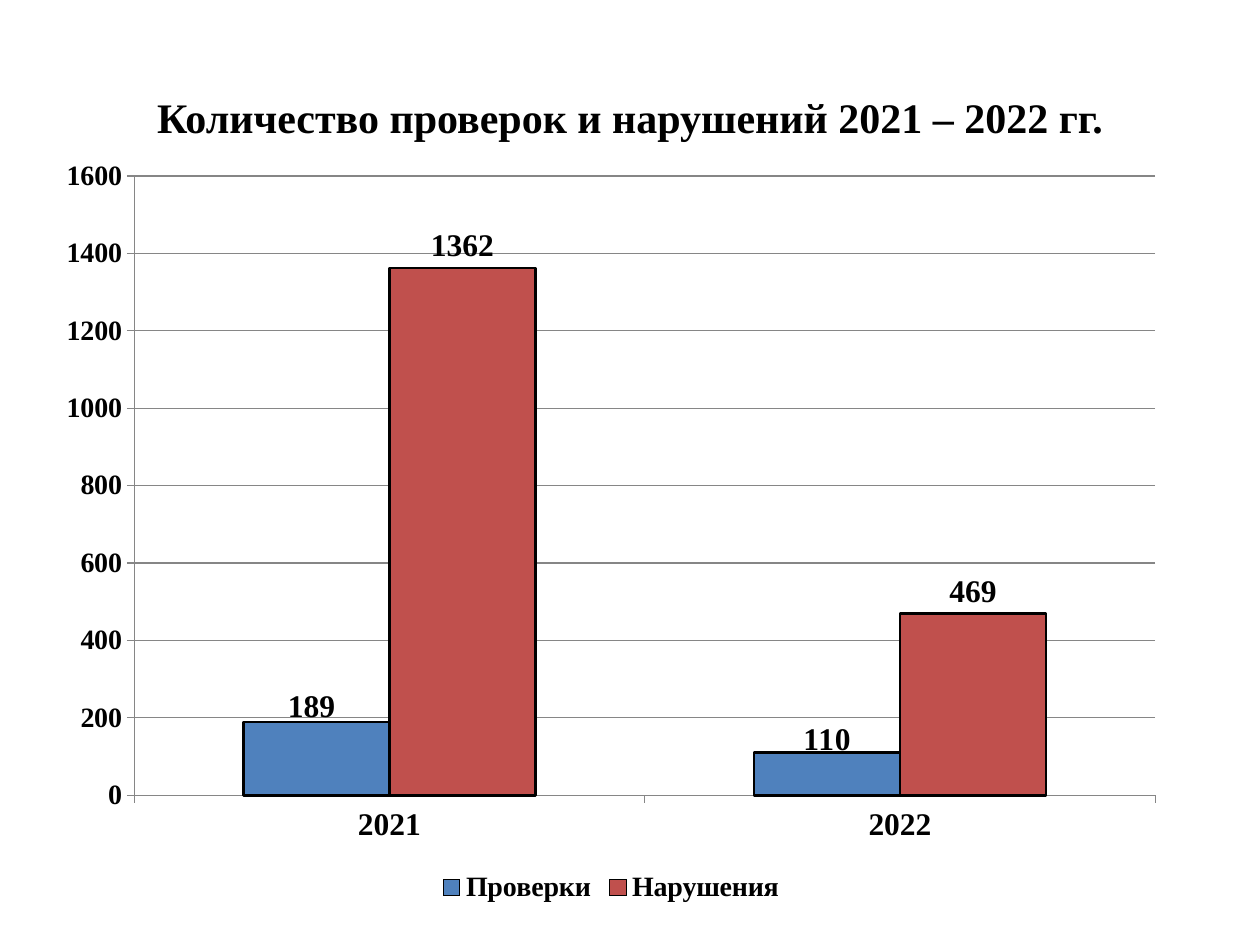
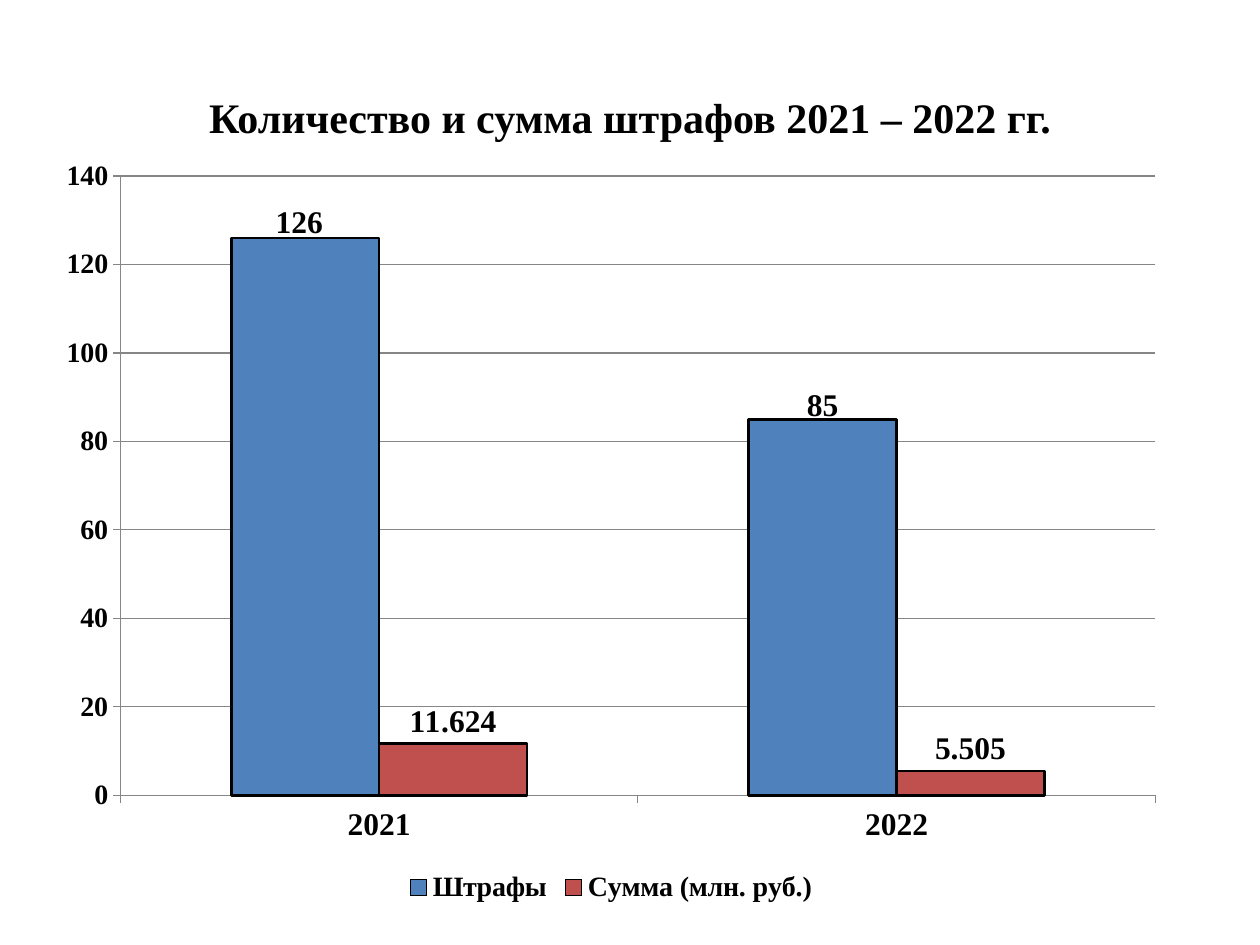
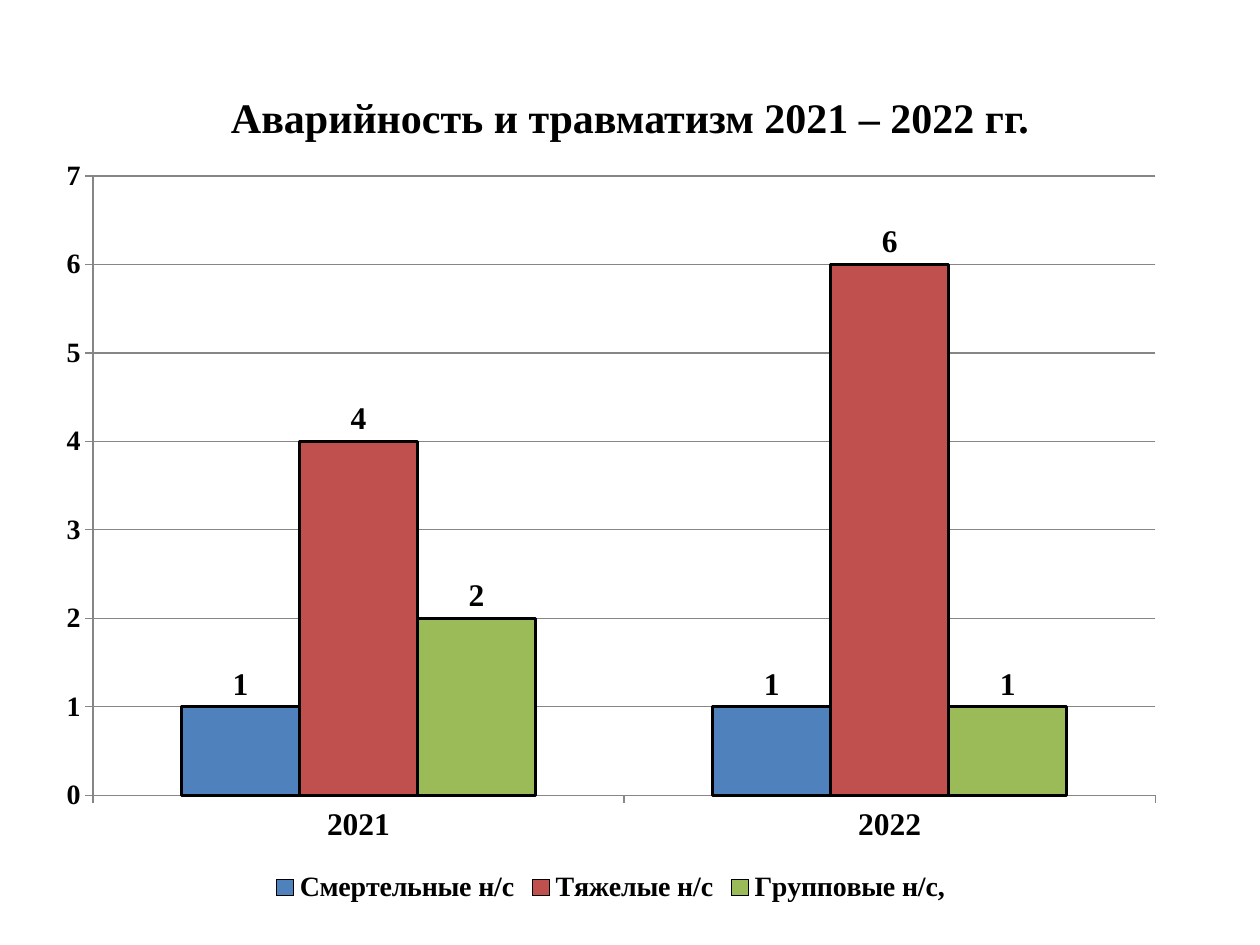
"""Build three slides of yearly column charts on inspections, fines and accidents."""
from lxml import etree
from pptx import Presentation
from pptx.chart.data import CategoryChartData as ChartData
from pptx.dml.color import RGBColor
from pptx.enum.chart import XL_CHART_TYPE as ChartType
from pptx.enum.chart import XL_LABEL_POSITION as LabelPosition
from pptx.enum.chart import XL_LEGEND_POSITION as LegendPosition
from pptx.enum.chart import XL_TICK_MARK as TickMark
from pptx.enum.text import MSO_ANCHOR as Anchor
from pptx.enum.text import PP_ALIGN as Align
from pptx.oxml.ns import qn
from pptx.util import Emu, Pt

BLACK = RGBColor(0x00, 0x00, 0x00)
GRAY = RGBColor(0x86, 0x86, 0x86)
BLUE = RGBColor(0x4F, 0x81, 0xBD)
RED = RGBColor(0xC0, 0x50, 0x4D)
GREEN = RGBColor(0x9B, 0xBB, 0x59)
SERIES_COLORS = [BLUE, RED, GREEN]
SERIF = "Times New Roman"
PX = 914400 / 126
TITLE_AREA = [Emu(round(n * PX)) for n in (63, 38, 1134, 158)]
CHART_WIDTH, CHART_HEIGHT = 1134, 764
CHART_AREA = [Emu(round(n * PX)) for n in (44, 145, CHART_WIDTH, CHART_HEIGHT)]
YEARS = ["2021", "2022"]


def style_font(font, size=18, name=SERIF, bold=True, color=BLACK):
    font.size = Pt(size)
    font.name = name
    font.bold = bold
    font.color.rgb = color


def add_text(page, area, text, align=Align.CENTER, anchor=Anchor.MIDDLE, **font_format):
    box = page.shapes.add_textbox(*area)
    frame = box.text_frame
    frame.word_wrap = True
    frame.vertical_anchor = anchor
    para = frame.paragraphs[0]
    para.alignment = align
    span = para.add_run()
    span.text = text
    style_font(span.font, **font_format)


SLIDES = [
    {
        "title": "Количество проверок и нарушений 2021 – 2022 гг.",
        "series": {"Проверки": (189, 110), "Нарушения": (1362, 469)},
        "top": 1600,
        "step": 200,
        "label_shifts": [(-5, 7), (0, 9)],
    },
    {
        "title": "Количество и сумма штрафов 2021 – 2022 гг.",
        "series": {"Штрафы": (126, 85), "Сумма (млн. руб.)": (11.624, 5.505)},
        "top": 140,
        "step": 20,
        "label_shifts": [(-6, 7), (0, 9)],
    },
    {
        "title": "Аварийность и травматизм 2021 – 2022 гг.",
        "series": {
            "Смертельные н/с": (1, 1),
            "Тяжелые н/с": (4, 6),
            "Групповые н/с,": (2, 1),
        },
        "top": 7,
        "step": 1,
        "label_shifts": [],
    },
]

deck = Presentation()
deck.slide_width = Emu(round(1260 * PX))
deck.slide_height = Emu(round(945 * PX))

for content in SLIDES:
    page = deck.slides.add_slide(deck.slide_layouts[6])
    add_text(page, TITLE_AREA, content["title"], size=24)

    data = ChartData()
    data.categories = YEARS
    for name, values in content["series"].items():
        data.add_series(name, values)
    chart = page.shapes.add_chart(ChartType.COLUMN_CLUSTERED, *CHART_AREA, data).chart
    chart.has_title = False
    style_font(chart.font, name="Calibri", bold=False)

    chart.has_legend = True
    chart.legend.position = LegendPosition.BOTTOM
    chart.legend.include_in_layout = False
    style_font(chart.legend.font, size=16)

    for axis, size in ((chart.category_axis, 18), (chart.value_axis, 16)):
        axis.major_tick_mark = TickMark.OUTSIDE
        axis.minor_tick_mark = TickMark.NONE
        axis.format.line.color.rgb = GRAY
        style_font(axis.tick_labels.font, size=size)
    scale = chart.value_axis
    scale.minimum_scale = 0
    scale.maximum_scale = content["top"]
    scale.major_unit = content["step"]
    scale.has_major_gridlines = True
    scale.major_gridlines.format.line.color.rgb = GRAY

    plot = chart.plots[0]
    plot.gap_width = 150
    plot.overlap = 0
    plot.vary_by_categories = False
    for series, color in zip(plot.series, SERIES_COLORS):
        series.format.fill.solid()
        series.format.fill.fore_color.rgb = color
        series.format.line.color.rgb = BLACK
        series.format.line.width = Pt(1.5)
        series.data_labels.show_value = True
        series.data_labels.position = LabelPosition.OUTSIDE_END
        style_font(series.data_labels.font)

    first = plot.series[0]
    for index, (right, down) in enumerate(content["label_shifts"]):
        label = first.points[index].data_label
        label.position = LabelPosition.OUTSIDE_END
        style_font(label.font)
        node = first.data_labels._element.findall(qn("c:dLbl"))[index]
        layout = etree.Element(qn("c:layout"))
        manual = etree.SubElement(layout, qn("c:manualLayout"))
        for axis_name, shift in (("x", right / CHART_WIDTH), ("y", down / CHART_HEIGHT)):
            etree.SubElement(manual, qn(f"c:{axis_name}"), val=f"{shift:.4f}")
        node.insert(1, layout)

deck.save("out.pptx")
